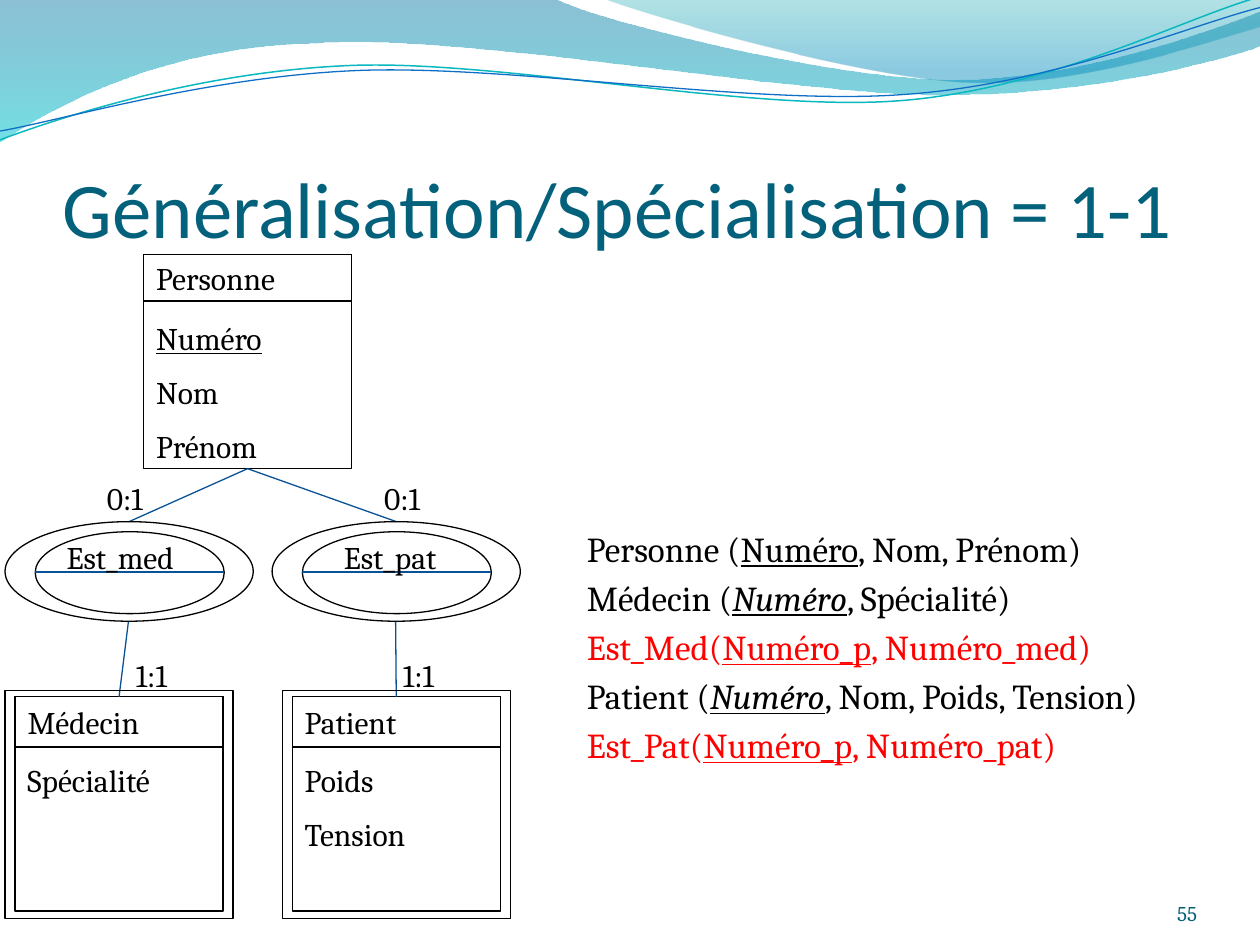
import math
from dataclasses import dataclass

from lxml import etree
from pptx import Presentation
from pptx import util as u
from pptx.dml.color import RGBColor
from pptx.enum import shapes, text
from pptx.oxml.ns import qn

Inches = u.Inches
RECT = shapes.MSO_SHAPE.RECTANGLE
OVAL = shapes.MSO_SHAPE.OVAL


@dataclass(frozen=True)
class Theme:
    """Hold the colours, fonts and type sizes of the slide."""
    ink: str = "000000"
    alert: str = "FF0000"
    title: str = "04617B"
    page: str = "045D75"
    link: str = "095295"
    teal: str = "0AB8BF"
    blue: str = "0F6FC6"
    head: str = "Calibri"
    body: str = "Cambria"
    big: int = 45
    mid: int = 20
    base: int = 18
    small: int = 12
    line: float = 0.75


T = Theme()

LEFT = ((0, 0), [(4.4, -0.01), (4.76, 0.17, 6.64, 0.63, 7.58, 0.63),
                 (8.53, 0.63, 9.58, 0.26, 10, 0.09), (10.01, 0.36),
                 (9.83, 0.44, 8.7, 0.76, 7.46, 0.75),
                 (6.22, 0.75, 3.82, 0.28, 2.57, 0.34),
                 (1.29, 0.36, 0.46, 0.83, -0.01, 1.13)])
RIGHT = ((4.79, -0.01), [(5.09, 0.11, 6.82, 0.62, 7.69, 0.65),
                         (8.56, 0.69, 9.61, 0.32, 10, 0.21), (10, 0)])
UPPER = ((0, 1.11), [(0.48, 0.93, 1.58, 0.57, 2.77, 0.52),
                     (3.95, 0.47, 5.93, 0.89, 7.13, 0.8),
                     (8.33, 0.71, 9.38, 0.15, 9.98, -0.02)])
LOWER = ((0, 1.04), [(0.47, 0.96, 1.64, 0.61, 2.83, 0.56),
                     (4.03, 0.51, 5.97, 0.84, 7.17, 0.75),
                     (8.36, 0.67, 9.41, 0.21, 10, 0.06)])


def put(para, words, size=T.base, color=T.ink, font=T.body, under=False, ital=False):
    """Add one formatted run to a paragraph."""
    run = para.add_run()
    run.text = words
    run.font.size = u.Pt(size)
    run.font.name = font
    run.font.color.rgb = RGBColor.from_string(color)
    run.font.underline = under
    run.font.italic = ital


def rows(area, count, gap=0):
    """Return the paragraphs of a wrapped frame, spaced after the first."""
    area.word_wrap = True
    paras = [area.paragraphs[0]] + [area.add_paragraph() for _ in range(count - 1)]
    for para in paras:
        para.alignment = text.PP_ALIGN.LEFT
    for para in paras[1:]:
        para.space_before = u.Pt(gap)
    return paras


def field(slide, x, y, w, h):
    """Add an empty text box and return its frame."""
    return slide.shapes.add_textbox(*map(Inches, (x, y, w, h))).text_frame


def label(slide, x, y, w, words, h=0.4):
    """Place one short label."""
    put(rows(field(slide, x, y, w, h), 1)[0], words)


def frame(slide, kind, x, y, w, h):
    """Draw an unfilled outlined shape."""
    shape = slide.shapes.add_shape(kind, *map(Inches, (x, y, w, h)))
    shape.shadow.inherit = False
    shape.fill.background()
    shape.line.color.rgb = RGBColor.from_string(T.ink)
    shape.line.width = u.Pt(T.line)
    return shape


def link(slide, start, end):
    """Draw a straight connector."""
    kind = shapes.MSO_CONNECTOR.STRAIGHT
    line = slide.shapes.add_connector(kind, *map(Inches, (*start, *end)))
    line.line.color.rgb = RGBColor.from_string(T.link)
    line.line.width = u.Pt(T.line)
    etree.SubElement(line._element.spPr, qn("a:effectLst"))
    return line


def turn(point, angle, mid=(4.99, 0.58)):
    """Rotate a point clockwise about a middle."""
    dx, dy = point[0] - mid[0], point[1] - mid[1]
    cos, sin = math.cos(math.radians(angle)), math.sin(math.radians(angle))
    return mid[0] + dx * cos - dy * sin, mid[1] + dx * sin + dy * cos


def curve(slide, route, close, tilt=0):
    """Build a freeform of straight and cubic parts, tilted anticlockwise."""
    start, parts = route
    spots = [start] + [part[i:i + 2] for part in parts for i in range(0, len(part), 2)]
    points = [tuple(map(Inches, turn(spot, tilt))) for spot in spots]
    form = slide.shapes.build_freeform(*points[0])
    form.add_line_segments(points[1:], close=close)
    shape = form.convert_to_shape()
    shape.shadow.inherit = False
    shape.rotation = -tilt
    nodes = iter(list(shape._element.spPr.iter(qn("a:lnTo"))))
    for part in parts:
        node = next(nodes)
        if len(part) == 6:
            node.tag = qn("a:cubicBezTo")
            for extra in (next(nodes), next(nodes)):
                node.append(extra[0])
                extra.getparent().remove(extra)
    return shape


def wave(slide, route, stops):
    """Draw a closed wave with a translucent downward gradient."""
    shape = curve(slide, route, True)
    shape.line.fill.background()
    shape.fill.gradient()
    shape.fill.gradient_angle = 270
    for stop, (place, color, _) in zip(shape.fill.gradient_stops, stops):
        stop.position = place
        stop.color.rgb = RGBColor.from_string(color)
    nodes = shape._element.spPr.iter(qn("a:srgbClr"))
    for node, (_, _, alpha) in zip(list(nodes), stops):
        etree.SubElement(node, qn("a:alpha"), val=str(alpha * 1000))


def banner(slide):
    """Draw the waves and the two thin curves along the top."""
    wave(slide, LEFT, [(0, "0074A1", 45), (1, "00C6CF", 55)])
    wave(slide, RIGHT, [(0, "00A1A9", 30), (0.8, "008BBF", 45)])
    for route, color, width in ((UPPER, T.teal, 0.85), (LOWER, T.blue, T.line)):
        shape = curve(slide, route, False, tilt=2.7)
        shape.fill.background()
        shape.line.color.rgb = RGBColor.from_string(color)
        shape.line.width = u.Pt(width)


def notice(slide, x, y, w, h, words, align, inset=0, **style):
    """Place bottom-anchored text without side margins."""
    area = field(slide, x, y, w, h)
    area.margin_left = area.margin_right = area.margin_bottom = 0
    area.margin_top = Inches(inset)
    area.vertical_anchor = text.MSO_ANCHOR.BOTTOM
    para = rows(area, 1)[0]
    para.alignment = align
    put(para, words, **style)


def entity(slide, x, y, name, items, key=None, head=0.4):
    """Draw an entity with its name and attributes and return its outline."""
    body = frame(slide, RECT, x, y, 1.65, 1.7)
    top = frame(slide, RECT, x, y, 1.65, head)
    put(rows(top.text_frame, 1)[0], name)
    area = field(slide, x, y + 0.46, 1.53, 0.4 * len(items))
    for para, item in zip(rows(area, len(items), gap=9.3), items):
        put(para, item, under=item == key)
    return body


def branch(slide, root, x, side, name, kind, items):
    """Draw a relation and its weak entity, joined to the root entity."""
    y, mid = 4.14, x + 0.98
    weak = entity(slide, side + 0.08, 5.53, kind, items)
    frame(slide, OVAL, x + 0.24, y + 0.08, 1.5, 0.65)
    link(slide, (x + 0.24, y + 0.4), (x + 1.74, y + 0.4))
    upper = link(slide, (1.97, 3.72), (mid, y))
    link(slide, (mid, y + 0.79), (mid, 5.53)).end_connect(weak, 0)
    label(slide, side + 0.39, y + 0.08, 1.18, name)
    label(slide, side + 0.71, 3.75, 0.63, "0:1")
    label(slide, x + 0.94, 5.16, 0.63, "1:1")
    frame(slide, RECT, side, 5.48, 1.81, 1.81)
    outer = frame(slide, OVAL, x, y, 1.97, 0.79)
    upper.begin_connect(root, 2)
    upper.end_connect(outer, 0)


def schema(slide, x, y, w, h):
    """List the relations with their underlined keys."""
    lines = [("Personne (", "Numéro", ", Nom, Prénom)", T.ink, False),
             ("Médecin (", "Numéro", ", Spécialité)", T.ink, True),
             ("Est_Med(", "Numéro_p", ", Numéro_med)", T.alert, False),
             ("Patient (", "Numéro", ", Nom, Poids, Tension)", T.ink, True),
             ("Est_Pat(", "Numéro_p", ", Numéro_pat)", T.alert, False)]
    paras = rows(field(slide, x, y, w, h), len(lines), gap=4)
    for para, (lead, key, rest, color, ital) in zip(paras, lines):
        props = para._p.get_or_add_pPr()
        props.set("marL", str(Inches(0.7)))
        props.set("indent", str(Inches(-0.27)))
        put(para, lead, size=T.mid, color=color)
        put(para, key, size=T.mid, color=color, under=True, ital=ital)
        put(para, rest, size=T.mid, color=color)


def main():
    """Build and save the slide."""
    deck = Presentation()
    deck.slide_width, deck.slide_height = Inches(10), Inches(7.5)
    slide = deck.slides.add_slide(deck.slide_layouts[6])
    banner(slide)
    notice(slide, 0.5, 0.77, 9, 1.25, "Généralisation/Spécialisation = 1-1",
           text.PP_ALIGN.LEFT, inset=0.05, size=T.big, color=T.title, font=T.head)
    notice(slide, 8.67, 6.95, 0.83, 0.4, "55", text.PP_ALIGN.RIGHT,
           size=T.small, color=T.page)
    root = entity(slide, 1.14, 2.02, "Personne", ["Numéro", "Nom", "Prénom"],
                  key="Numéro", head=0.37)
    branch(slide, root, 0.04, 0.04, "Est_med", "Médecin", ["Spécialité"])
    branch(slide, root, 2.16, 2.24, "Est_pat", "Patient", ["Poids", "Tension"])
    schema(slide, 4.13, 4.14, 5.35, 2.2)
    deck.save("out.pptx")


if __name__ == "__main__":
    main()
